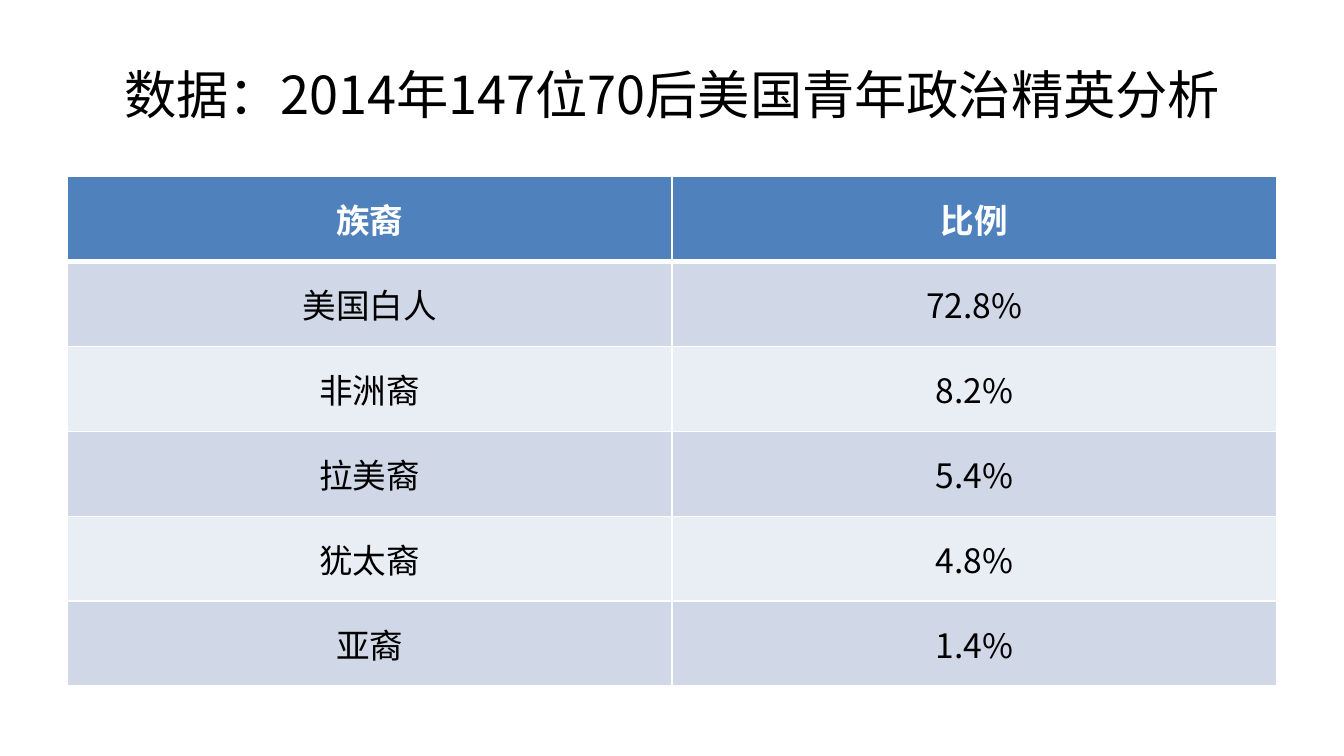
from lxml.etree import SubElement
from pptx import Presentation
from pptx.dml.color import RGBColor
from pptx.enum.text import MSO_ANCHOR as Anchor, PP_ALIGN as Align
from pptx.oxml.ns import qn
from pptx.util import Cm, Pt


def color(code):
    return RGBColor.from_string(code)


class Deck:
    font = "Noto Sans CJK SC"
    ink, white = "000000", "FFFFFF"
    head, bands = "4F81BD", ("D0D8E8", "E9EDF4")

    def __init__(self, wide, high):
        self.prs = Presentation()
        self.prs.slide_width, self.prs.slide_height = Cm(wide), Cm(high)
        self.slide = self.prs.slides.add_slide(self.prs.slide_layouts[6])

    def label(self, frame, text, size, tint, bold=False):
        para = frame.paragraphs[0]
        para.text = text
        para.alignment = Align.CENTER
        for run in para.runs:
            font = run.font
            font.name, font.size, font.bold = self.font, Pt(size), bold
            font.color.rgb = color(tint)
            # East Asian letters take their own typeface
            SubElement(font._element, qn("a:ea"), typeface=self.font)

    def title(self, text, x, y, w, h):
        box = self.slide.shapes.add_textbox(Cm(x), Cm(y), Cm(w), Cm(h))
        frame = box.text_frame
        frame.word_wrap = True
        frame.vertical_anchor = Anchor.MIDDLE
        self.label(frame, text, 28, self.ink)

    def edges(self, cell, top=1, base=1):
        props = cell._tc.get_or_add_tcPr()
        sides = {"L": 1, "R": 1, "T": top, "B": base}
        for spot, (side, width) in enumerate(sides.items()):
            line = SubElement(props, qn(f"a:ln{side}"), w=str(Pt(width)))
            fill = SubElement(line, qn("a:solidFill"))
            SubElement(fill, qn("a:srgbClr"), val=self.white)
            props.insert(spot, line)  # borders come before the fill

    def table(self, rows, x, y, w, h):
        grid = self.slide.shapes.add_table(
            len(rows), len(rows[0]), Cm(x), Cm(y), Cm(w), Cm(h)).table
        for r, row in enumerate(rows):
            top = r == 0
            for c, text in enumerate(row):
                cell = grid.cell(r, c)
                cell.vertical_anchor = Anchor.MIDDLE
                cell.margin_left = cell.margin_right = Cm(0.25)
                cell.margin_top = cell.margin_bottom = Cm(0.1)
                cell.fill.solid()
                cell.fill.fore_color.rgb = color(
                    self.head if top else self.bands[(r - 1) % 2])
                self.edges(cell, 3 if r == 1 else 1, 3 if top else 1)
                self.label(cell.text_frame, text, 18,
                           self.white if top else self.ink, top)

    def save(self):
        self.prs.save("out.pptx")


def main():
    deck = Deck(25.4, 14.29)

    # Title
    deck.title("数据：2014年147位70后美国青年政治精英分析",
               1.27, 0.58, 22.86, 2.39)

    # Share of each group
    deck.table([
        ("族裔", "比例"),
        ("美国白人", "72.8%"),
        ("非洲裔", "8.2%"),
        ("拉美裔", "5.4%"),
        ("犹太裔", "4.8%"),
        ("亚裔", "1.4%"),
    ], 1.27, 3.34, 22.86, 9.63)

    deck.save()


if __name__ == "__main__":
    main()
